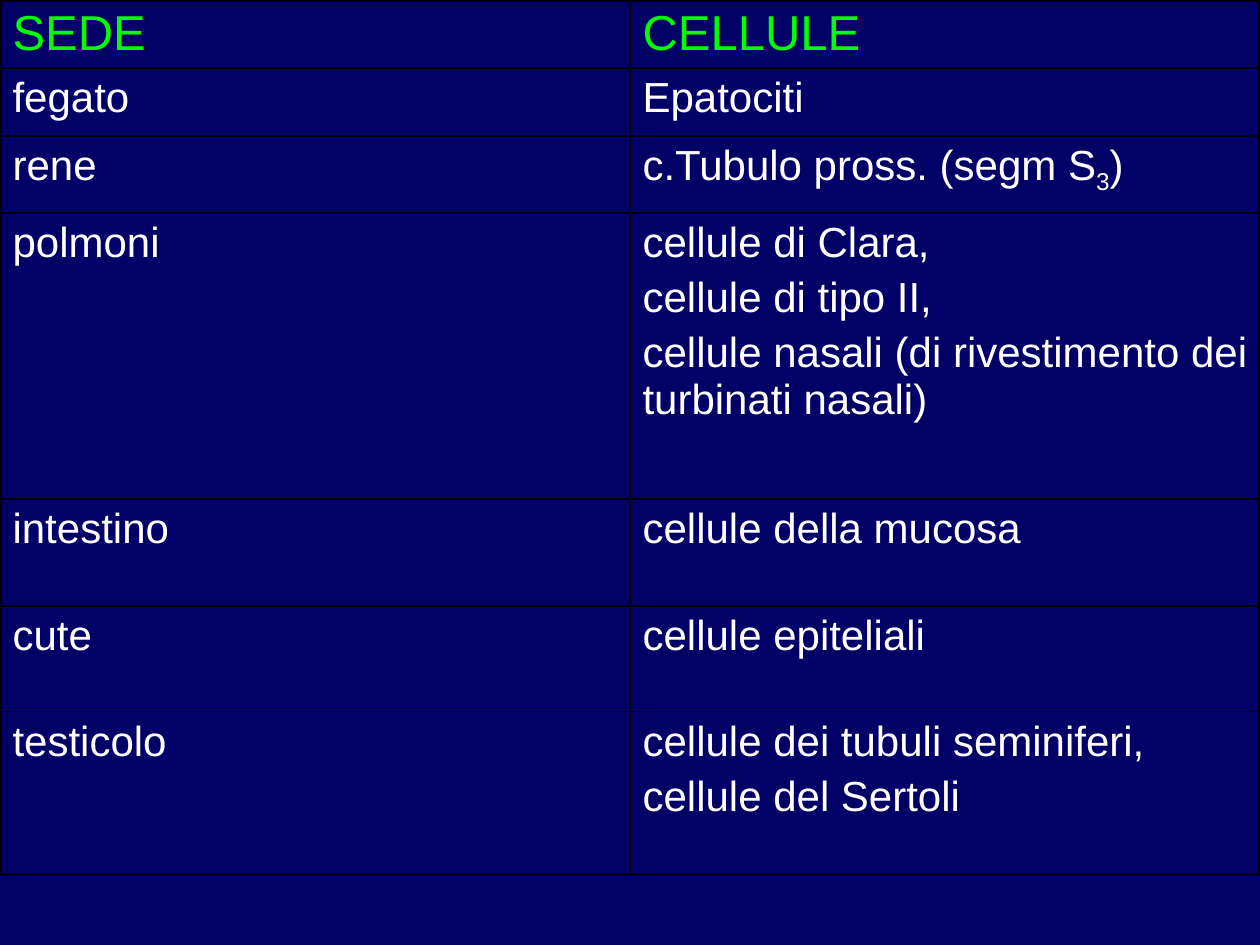
from dataclasses import dataclass

import pptx
import pptx.dml.color
import pptx.oxml.ns
import pptx.oxml.xmlchemy
import pptx.table
import pptx.util
from lxml import etree

RGBColor = pptx.dml.color.RGBColor
Inches = pptx.util.Inches
Pt = pptx.util.Pt
qn = pptx.oxml.ns.qn

NAVY = RGBColor(0x00, 0x00, 0x66)
GREEN = RGBColor(0x00, 0xFF, 0x00)
WHITE = RGBColor(0xFF, 0xFF, 0xFF)
BLACK = RGBColor(0x00, 0x00, 0x00)
FONT = "Arial"
SUBSCRIPT = "3"
OUTER, INNER = 2.25, 1.0


@dataclass(frozen=True)
class SiteRow:
    site: str
    cells: tuple[str, ...]
    height: float
    size: int = 24
    color: RGBColor = WHITE


ROWS = [
    SiteRow("SEDE", ("CELLULE",), 0.54, 28, GREEN),
    SiteRow("fegato", ("Epatociti",), 0.54),
    SiteRow("rene", ("c.Tubulo pross. (segm S3)",), 0.61),
    SiteRow(
        "polmoni",
        (
            "cellule di Clara,",
            "cellule di tipo II,",
            "cellule nasali (di rivestimento dei turbinati nasali)",
        ),
        2.27,
    ),
    SiteRow("intestino", ("cellule della mucosa",), 0.85),
    SiteRow("cute", ("cellule epiteliali",), 0.84),
    SiteRow("testicolo", ("cellule dei tubuli seminiferi,", "cellule del Sertoli"), 1.29),
]


def set_borders(cell: pptx.table._Cell, widths: dict[str, float]) -> None:
    tc_pr = cell._tc.get_or_add_tcPr()
    for i, (side, width) in enumerate(widths.items()):
        ln = etree.Element(qn(f"a:ln{side}"), w=str(int(Pt(width))))
        fill = etree.SubElement(ln, qn("a:solidFill"))
        etree.SubElement(fill, qn("a:srgbClr"), val=str(BLACK))
        tc_pr.insert(i, ln)


def write_cell(cell: pptx.table._Cell, lines: tuple[str, ...], row: SiteRow) -> None:
    cell.fill.background()
    tf = cell.text_frame
    for i, line in enumerate(lines):
        p = tf.add_paragraph() if i else tf.paragraphs[0]
        p.font.name = FONT
        p.font.size = Pt(row.size)
        p.font.color.rgb = row.color
        if i:
            p.space_before = Pt(row.size * 0.2)
        for text in line.partition(SUBSCRIPT):
            if text:
                r = p.add_run()
                r.text = text
                if text == SUBSCRIPT:
                    r.font._element.set("baseline", "-25000")


def add_site_table(s: pptx.slide.Slide, rows: list[SiteRow]) -> None:
    height = sum(row.height for row in rows)
    table = s.shapes.add_table(
        len(rows), 2, 0, 0, Inches(10), Inches(height)
    ).table
    table.first_row = False
    table.horz_banding = False
    last = len(rows) - 1
    for i, row in enumerate(rows):
        table.rows[i].height = Inches(row.height)
        for j, lines in enumerate(((row.site,), row.cells)):
            cell = table.cell(i, j)
            write_cell(cell, lines, row)
            set_borders(
                cell,
                {
                    "L": OUTER if j == 0 else INNER,
                    "R": OUTER if j == 1 else INNER,
                    "T": OUTER if i == 0 else INNER,
                    "B": OUTER if i == last else INNER,
                },
            )


def main() -> None:
    prs = pptx.Presentation()
    prs.slide_width = Inches(10)
    prs.slide_height = Inches(7.5)
    s = prs.slides.add_slide(prs.slide_layouts[6])
    s.background.fill.solid()
    s.background.fill.fore_color.rgb = NAVY
    add_site_table(s, ROWS)
    prs.save("out.pptx")


if __name__ == "__main__":
    main()
